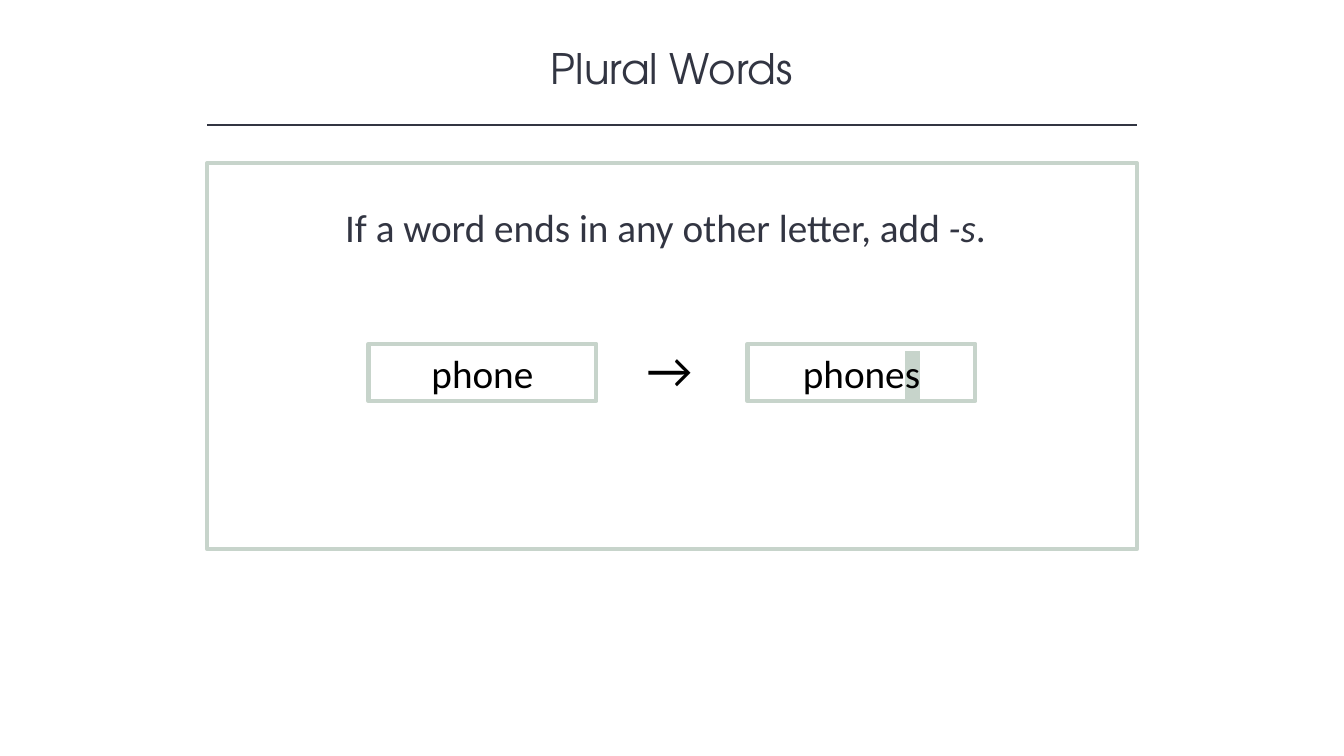
from lxml.etree import SubElement
from pptx import Presentation
from pptx.dml.color import RGBColor as RGB
from pptx.enum.shapes import MSO_CONNECTOR as LINE, MSO_SHAPE as SHAPE
from pptx.enum.text import MSO_ANCHOR as ANCHOR, MSO_AUTO_SIZE as AUTO, PP_ALIGN as ALIGN
from pptx.oxml import parse_xml
from pptx.oxml.ns import nsdecls, qn
from pptx.util import Inches as In, Pt

INK = {"dark": "323542", "sage": "C7D4CB", "black": "000000"}
WIDE, HIGH = 13.33, 7.5
MID = WIDE / 2
SPAN = 9.22
LEFT, RIGHT = MID - SPAN / 2, MID + SPAN / 2
STEP = 1.88

deck = Presentation()
deck.slide_width, deck.slide_height = In(WIDE), In(HIGH)
slide = deck.slides.add_slide(deck.slide_layouts[6])
items = slide.shapes


def write(shape, *runs, size=28, color="black", face="Calibri",
          align=ALIGN.CENTER, anchor=ANCHOR.TOP, wrap=True):
    frame = shape.text_frame
    frame.word_wrap = wrap
    frame.auto_size = AUTO.SHAPE_TO_FIT_TEXT
    frame.vertical_anchor = anchor
    para = frame.paragraphs[0]
    para.alignment = align
    for text, style in runs:
        run = para.add_run()
        run.text = text
        font = run.font
        font.size, font.name = Pt(size), face
        font.color.rgb = RGB.from_string(INK[color])
        if style == "italic":
            font.italic = True
        if style == "mark":
            mark = parse_xml(f'<a:highlight {nsdecls("a")}><a:srgbClr val="{INK["sage"]}"/></a:highlight>')
            run._r.get_or_add_rPr().find(qn("a:solidFill")).addnext(mark)


def frame(mid, top, wide, high):
    box = items.add_shape(SHAPE.RECTANGLE, In(mid - wide / 2), In(top), In(wide), In(high))
    box.shadow.inherit = False
    box.fill.background()
    box.line.color.rgb = RGB.from_string(INK["sage"])
    box.line.width = Pt(3)
    return box


title = items.add_textbox(In(MID - 5), In(0.37), In(10), In(0.61))
write(title, ("Plural Words", ""), size=30, color="dark", face="TeX Gyre Adventor")

rule = items.add_connector(LINE.STRAIGHT, In(LEFT), In(1.24), In(RIGHT), In(1.24))
rule.line.color.rgb = RGB.from_string(INK["dark"])
rule.line.width = Pt(1)
SubElement(rule._element.spPr, qn("a:effectLst"))

hint = items.add_textbox(In(2.71), In(1.97), In(7.78), In(0.57))
write(hint, ("If a word ends in any other letter, add ", ""), ("-s", "italic"), (".", ""), color="dark")

frame(MID, 1.62, SPAN, 3.83)

words = [[("phone", "")], [("phone", ""), ("s", "mark")]]
for side, word in zip((-1, 1), words):
    card = frame(MID + side * STEP, 3.41, 2.26, 0.57)
    write(card, *word, anchor=ANCHOR.MIDDLE)

arrow = items.add_textbox(In(MID - 0.35), In(3.3), In(0.7), In(0.71))
write(arrow, ("→", ""), size=36, align=ALIGN.LEFT, wrap=False)

deck.save("out.pptx")
